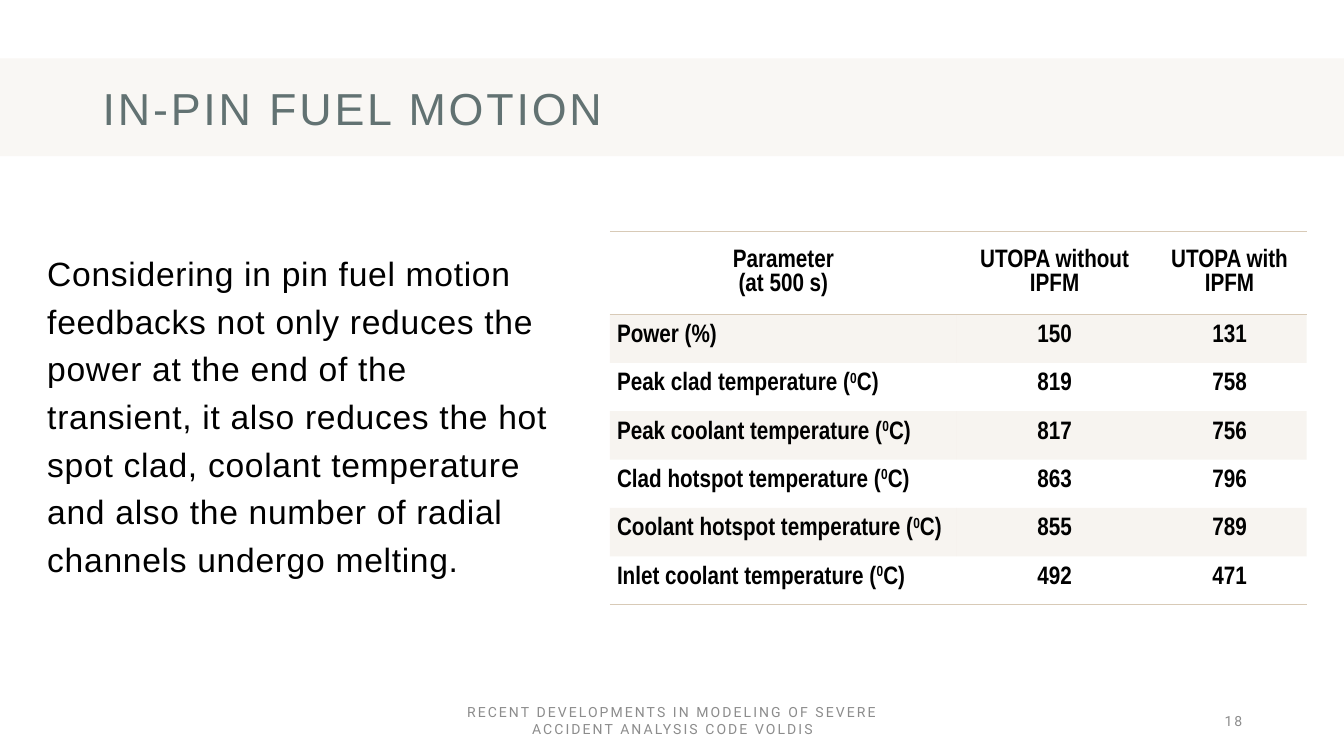
from dataclasses import dataclass

from lxml import etree
from pptx import Presentation
from pptx.dml.color import RGBColor
from pptx.enum.shapes import MSO_SHAPE
from pptx.enum.text import MSO_ANCHOR, PP_ALIGN
from pptx.oxml.ns import qn
from pptx.util import Inches, Pt

LEFT, CENTER, RIGHT = PP_ALIGN.LEFT, PP_ALIGN.CENTER, PP_ALIGN.RIGHT
TOP, MIDDLE = MSO_ANCHOR.TOP, MSO_ANCHOR.MIDDLE
RECTANGLE = MSO_SHAPE.RECTANGLE
SAND, SLATE, GRAY, BLACK = "D8CAB7", "627272", "8C8C8C", "000000"
PLAIN_TABLE_STYLE = "{2D5ABB26-0587-4C30-8999-92F81FD0307C}"


@dataclass
class TextBlock:
    text: str
    left: float
    top: float
    width: float
    height: float
    size: float
    font: str
    color: str
    tracking: float
    align: PP_ALIGN = LEFT
    anchor: MSO_ANCHOR = MIDDLE
    line_spacing: float | Pt | None = None


@dataclass
class Reading:
    name: str
    without_ipfm: int
    with_ipfm: int
    in_degrees: bool = True


TEXT_BLOCKS = [
    TextBlock("IN-PIN FUEL MOTION", 0.92, 0.71, 11.5, 0.79,
              32, "Arial", SLATE, 2, line_spacing=0.9),
    TextBlock("Considering in pin fuel motion feedbacks not only reduces the power "
              "at the end of the transient, it also reduces the hot spot clad, "
              "coolant temperature and also the number of radial channels undergo melting.",
              0.37, 2.39, 5.21, 3.51, 24, "Arial", BLACK, 0.5,
              anchor=TOP, line_spacing=Pt(34)),
    TextBlock("18", 9.42, 6.95, 3, 0.4, 10, "Roboto", GRAY, 1.5, RIGHT),
    TextBlock("RECENT DEVELOPMENTS IN MODELING OF SEVERE ACCIDENT ANALYSIS CODE VOLDIS",
              4.42, 6.95, 4.5, 0.4, 10, "Roboto", GRAY, 1.5, CENTER),
]

HEADINGS = ["Parameter\n(at 500 s)", "UTOPA without IPFM", "UTOPA with IPFM"]
READINGS = [
    Reading("Power (%)", 150, 131, in_degrees=False),
    Reading("Peak clad temperature", 819, 758),
    Reading("Peak coolant temperature", 817, 756),
    Reading("Clad hotspot temperature", 863, 796),
    Reading("Coolant hotspot temperature", 855, 789),
    Reading("Inlet coolant temperature", 492, 471),
]
COLUMN_WIDTHS = [3.44, 1.94, 1.53]
HEADER_HEIGHT, ROW_HEIGHT = 0.82, 0.48


def rgb(color: str) -> RGBColor:
    return RGBColor.from_string(color)


def tint(fill, color: str, opacity: int) -> None:
    """Fill with a colour at the given opacity in percent."""
    fill.solid()
    fill.fore_color.rgb = rgb(color)
    color_element = fill._xPr.find(qn("a:solidFill"))[0]
    etree.SubElement(color_element, qn("a:alpha"), val=str(opacity * 1000))


def format_run(run, size: float, font: str, color: str,
               bold: bool = False, tracking: float = 0) -> None:
    run.font.size = Pt(size)
    run.font.name = font
    run.font.bold = bold
    run.font.color.rgb = rgb(color)
    if tracking:
        run._r.get_or_add_rPr().set("spc", str(round(tracking * 100)))


def add_text(slide, block: TextBlock) -> None:
    shape = slide.shapes.add_textbox(Inches(block.left), Inches(block.top),
                                     Inches(block.width), Inches(block.height))
    frame = shape.text_frame
    frame.word_wrap = True
    frame.vertical_anchor = block.anchor
    frame.text = block.text
    paragraph = frame.paragraphs[0]
    paragraph.alignment = block.align
    paragraph.line_spacing = block.line_spacing
    format_run(paragraph.runs[0], block.size, block.font, block.color,
               tracking=block.tracking)


def add_border(cell, side: str) -> None:
    line = etree.SubElement(cell._tc.get_or_add_tcPr(), qn(f"a:{side}"), w=str(Pt(1)))
    fill = etree.SubElement(line, qn("a:solidFill"))
    etree.SubElement(fill, qn("a:srgbClr"), val=SAND)


def add_degree_unit(paragraph) -> None:
    paragraph.runs[0].text += " ("
    degree = paragraph.add_run()
    degree.text = "0"
    degree._r.get_or_add_rPr().set("baseline", "30000")
    paragraph.add_run().text = "C)"


def format_cell(cell, align: PP_ALIGN, line_spacing: Pt | None = None) -> None:
    cell.vertical_anchor = MIDDLE
    cell.margin_left = cell.margin_right = Inches(0.07)
    cell.margin_top = cell.margin_bottom = 0
    for paragraph in cell.text_frame.paragraphs:
        paragraph.alignment = align
        paragraph.line_spacing = line_spacing
        for run in paragraph.runs:
            format_run(run, 18, "Arial Narrow", BLACK, bold=True)


def add_readings_table(slide) -> None:
    height = HEADER_HEIGHT + ROW_HEIGHT * len(READINGS)
    table = slide.shapes.add_table(len(READINGS) + 1, len(HEADINGS), Inches(6.05), Inches(2.3),
                                   Inches(sum(COLUMN_WIDTHS)), Inches(height)).table
    table.first_row = table.horz_banding = False
    table._tbl.tblPr.find(qn("a:tableStyleId")).text = PLAIN_TABLE_STYLE
    for column, width in zip(table.columns, COLUMN_WIDTHS):
        column.width = Inches(width)
    for index, row in enumerate(table.rows):
        row.height = Inches(ROW_HEIGHT if index else HEADER_HEIGHT)

    # Header row
    for column, heading in enumerate(HEADINGS):
        cell = table.cell(0, column)
        cell.text_frame.text = heading
        format_cell(cell, CENTER)
        add_border(cell, "lnT")
        add_border(cell, "lnB")

    # Reading rows, every other one tinted
    for row, reading in enumerate(READINGS, start=1):
        values = [reading.name, reading.without_ipfm, reading.with_ipfm]
        for column, value in enumerate(values):
            cell = table.cell(row, column)
            cell.text_frame.text = str(value)
            if column == 0 and reading.in_degrees:
                add_degree_unit(cell.text_frame.paragraphs[0])
            format_cell(cell, CENTER if column else LEFT, Pt(13))
            if row == len(READINGS):
                add_border(cell, "lnB")
            if row % 2:
                tint(cell.fill, SAND, 20)


def main() -> None:
    presentation = Presentation()
    presentation.slide_width = Inches(13.33)
    presentation.slide_height = Inches(7.5)
    slide = presentation.slides.add_slide(presentation.slide_layouts[6])

    # Title band
    band = slide.shapes.add_shape(RECTANGLE, 0, Inches(0.58), Inches(13.33), Inches(0.97))
    band.shadow.inherit = False
    band.line.fill.background()
    tint(band.fill, SAND, 15)

    # Texts and table
    for block in TEXT_BLOCKS:
        add_text(slide, block)
    add_readings_table(slide)

    presentation.save("out.pptx")


if __name__ == "__main__":
    main()
